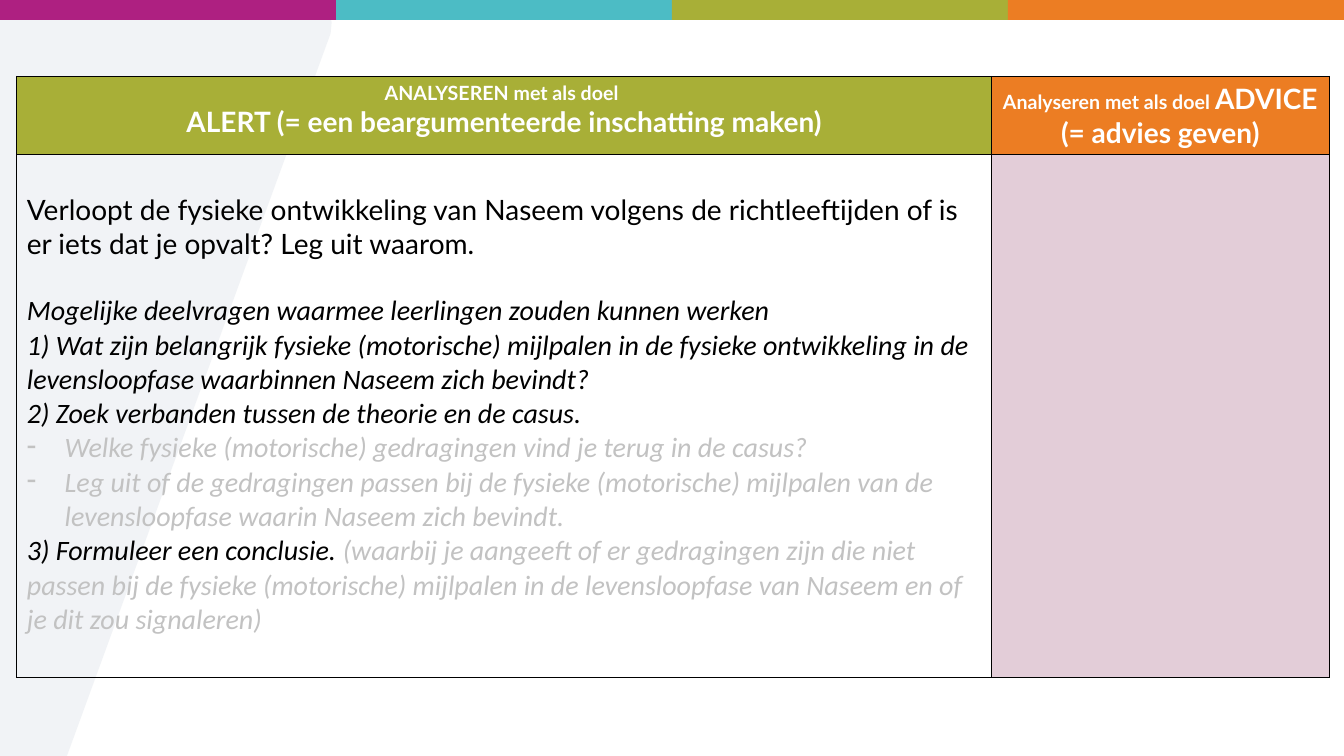
from lxml import etree
from pptx import Presentation
from pptx.dml.color import RGBColor
from pptx.enum import shapes, text
from pptx.oxml import ns
from pptx.util import Pt

WHITE = RGBColor(0xFF, 0xFF, 0xFF)
BLACK = RGBColor(0, 0, 0)
GREY = RGBColor(0xC2, 0xC2, 0xC2)
PALE = RGBColor(0xE8, 0xEC, 0xF0)
PURPLE = RGBColor(0xAE, 0x20, 0x81)
TEAL = RGBColor(0x4C, 0xBC, 0xC5)
GREEN = RGBColor(0xA8, 0xAF, 0x37)
ORANGE = RGBColor(0xEC, 0x7D, 0x23)
PINK = RGBColor(0xE3, 0xCD, 0xD8)

WIDTH, HEIGHT = 960, 540
BAR_COLOURS = [PURPLE, TEAL, GREEN, ORANGE]
BAR_HEIGHT = 14.2
PANEL = [(0, 3.6), (222.5, 3.6), (231, 5), (235.4, 9.4), (236.9, 16),
         (236.2, 23.8), (47.8, 540), (0, 540)]
TABLE_LEFT, TABLE_TOP = 12, 54.7
COLUMN_WIDTHS = [696.2, 241.2]
ROW_HEIGHTS = [55.2, 373.8]
BODY_TOP_MARGIN = 27.6
BLANK_LINE = 24
BULLET_INDENT = 27

SMALL = dict(name="Lato", size=Pt(14), bold=True, colour=WHITE)
LARGE = SMALL | dict(size=Pt(20))
QUESTION = LARGE | dict(bold=False, colour=BLACK)
STEP = QUESTION | dict(name="Calibri", italic=True)
HINT = STEP | dict(colour=GREY)

# A paragraph is (runs, format); a run is (wording, font values).
HEADINGS = [
    ([("ANALYSEREN met als doel \v", SMALL),
      ("ALERT (= een beargumenteerde inschatting maken)", LARGE)], GREEN),
    ([("Analyseren met als doel ", SMALL), ("ADVICE (= advies geven)", LARGE)], ORANGE),
]
CENTRED = dict(alignment=text.PP_ALIGN.CENTER)
AFTER_GAP = dict(space_before=Pt(BLANK_LINE))
BODY = [
    ([("Verloopt de fysieke ontwikkeling van Naseem volgens de richtleeftijden "
       "of is er iets dat je opvalt? Leg uit waarom.", QUESTION)], {}),
    ([("Mogelijke deelvragen waarmee leerlingen zouden kunnen werken", STEP)], AFTER_GAP),
    ([("1) Wat zijn belangrijk fysieke (motorische) mijlpalen in de fysieke ontwikkeling "
       "in de levensloopfase waarbinnen Naseem zich bevindt?", STEP)], {}),
    ([("2) Zoek verbanden tussen de theorie en de casus.", STEP)], {}),
    ([("Welke fysieke (motorische) gedragingen vind je terug in de casus?", HINT)],
     dict(bullet="-")),
    ([("Leg uit of de gedragingen passen bij de fysieke (motorische) mijlpalen van de "
       "levensloopfase waarin Naseem zich bevindt.", HINT)], dict(bullet="-")),
    ([("3) Formuleer een conclusie. ", STEP),
      ("(waarbij je aangeeft of er gedragingen zijn die niet passen bij de fysieke "
       "(motorische) mijlpalen in de levensloopfase van Naseem en of je dit zou "
       "signaleren)", HINT)], {}),
]


def paint(shape, colour):
    shape.shadow.inherit = False
    shape.fill.solid()
    shape.fill.fore_color.rgb = colour
    shape.line.fill.background()


def add_bullet(paragraph, character):
    properties = paragraph._p.get_or_add_pPr()
    properties.set("marL", str(Pt(BULLET_INDENT)))
    properties.set("indent", str(-Pt(BULLET_INDENT)))
    etree.SubElement(properties, ns.qn("a:buChar")).set("char", character)


def write(cell, paragraphs):
    for index, (runs, values) in enumerate(paragraphs):
        frame = cell.text_frame
        paragraph = frame.add_paragraph() if index else frame.paragraphs[0]
        for name, value in values.items():
            if name == "bullet":
                add_bullet(paragraph, value)
            else:
                setattr(paragraph, name, value)
        for wording, font_values in runs:
            pieces = wording.split("\v")
            for number, piece in enumerate(pieces):
                if number:
                    paragraph.add_line_break()
                if not piece:
                    continue
                run = paragraph.add_run()
                run.text = piece
                for name, value in font_values.items():
                    if name == "colour":
                        run.font.color.rgb = value
                    else:
                        setattr(run.font, name, value)


def add_borders(cell):
    properties = cell._tc.get_or_add_tcPr()
    for index, side in enumerate(("lnL", "lnR", "lnT", "lnB")):
        line = etree.Element(ns.qn("a:" + side), w=str(Pt(1)))
        fill = etree.SubElement(line, ns.qn("a:solidFill"))
        etree.SubElement(fill, ns.qn("a:srgbClr")).set("val", str(BLACK))
        properties.insert(index, line)


def fill_cell(cell, colour):
    if colour is None:
        cell.fill.background()
    else:
        cell.fill.solid()
        cell.fill.fore_color.rgb = colour


def add_backdrop(slide):
    builder = slide.shapes.build_freeform(Pt(PANEL[0][0]), Pt(PANEL[0][1]))
    builder.add_line_segments([(Pt(x), Pt(y)) for x, y in PANEL[1:]])
    panel = builder.convert_to_shape()
    paint(panel, PALE)
    colour = panel._element.spPr.find(".//" + ns.qn("a:srgbClr"))
    etree.SubElement(colour, ns.qn("a:alpha")).set("val", "59000")
    bar_width = WIDTH / len(BAR_COLOURS)
    for index, bar_colour in enumerate(BAR_COLOURS):
        bar = slide.shapes.add_shape(shapes.MSO_SHAPE.RECTANGLE, Pt(index * bar_width), 0,
                                     Pt(bar_width), Pt(BAR_HEIGHT))
        paint(bar, bar_colour)


def add_question_table(slide):
    table = slide.shapes.add_table(2, 2, Pt(TABLE_LEFT), Pt(TABLE_TOP),
                                   Pt(sum(COLUMN_WIDTHS)), Pt(sum(ROW_HEIGHTS))).table
    table.first_row = table.horz_banding = False
    for column, width in zip(table.columns, COLUMN_WIDTHS):
        column.width = Pt(width)
    for row, height in zip(table.rows, ROW_HEIGHTS):
        row.height = Pt(height)
    for index, (runs, colour) in enumerate(HEADINGS):
        write(table.cell(0, index), [(runs, CENTRED)])
        fill_cell(table.cell(0, index), colour)
    table.cell(1, 0).margin_top = Pt(BODY_TOP_MARGIN)
    write(table.cell(1, 0), BODY)
    fill_cell(table.cell(1, 0), None)
    fill_cell(table.cell(1, 1), PINK)
    for cell in table.iter_cells():
        add_borders(cell)


def main():
    presentation = Presentation()
    presentation.slide_width, presentation.slide_height = Pt(WIDTH), Pt(HEIGHT)
    slide = presentation.slides.add_slide(presentation.slide_layouts.get_by_name("Blank"))
    add_backdrop(slide)
    add_question_table(slide)
    presentation.save("out.pptx")


if __name__ == "__main__":
    main()
